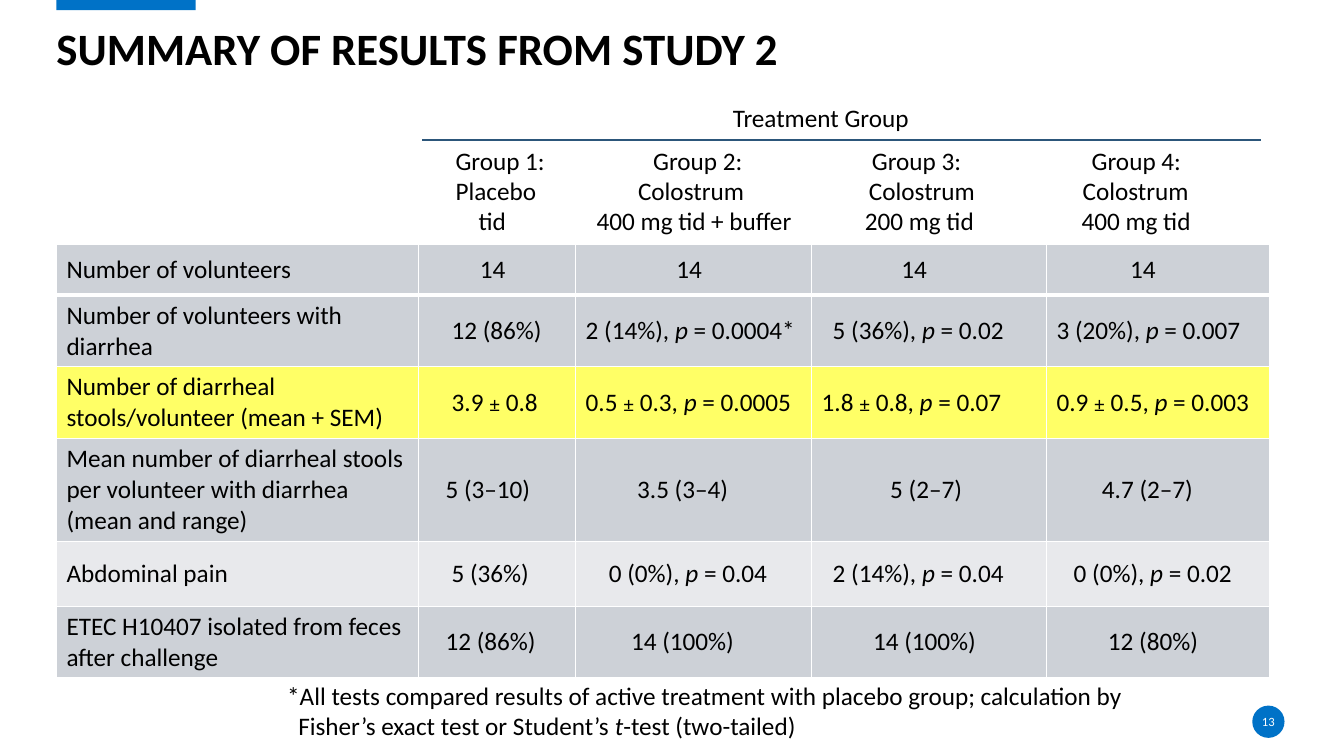
"""Build the slide that summarises the Study 2 results by treatment group."""
from dataclasses import dataclass

from lxml.etree import SubElement
from pptx import Presentation
from pptx.dml.color import RGBColor
from pptx.enum.shapes import MSO_CONNECTOR, MSO_SHAPE
from pptx.enum.text import MSO_ANCHOR, PP_ALIGN
from pptx.oxml.ns import qn
from pptx.util import Inches, Pt


@dataclass(frozen=True)
class Theme:
    font: str = "Calibri"
    symbol_font: str = "Times New Roman"
    title_size: int = 32
    body_size: int = 18
    symbol_size: int = 14
    number_size: int = 9
    black: str = "000000"
    white: str = "FFFFFF"
    accent: str = "0072C7"
    rule: str = "2C567A"
    band: str = "CDD1D7"
    light_band: str = "E8E9EC"
    highlight: str = "FFFF66"


theme = Theme()


def write(paragraph, text, size=theme.body_size, color=theme.black, bold=False,
          indent=0, align=PP_ALIGN.LEFT):
    """Write text into a paragraph; underscores enclose italics."""
    paragraph.alignment = align
    if indent:
        properties = paragraph._p.get_or_add_pPr()
        properties.set("marL", str(Inches(indent)))
        properties.set("indent", "0")
    for index, part in enumerate(text.split("_")):
        for piece in filter(None, part.partition("±")):
            is_symbol = piece == "±"
            run = paragraph.add_run()
            run.text = piece
            run.font.name = theme.symbol_font if is_symbol else theme.font
            run.font.size = Pt(theme.symbol_size if is_symbol else size)
            run.font.bold = bold or is_symbol
            run.font.italic = index % 2 == 1
            run.font.color.rgb = RGBColor.from_string(color)


def add_text_frame(left, top, width, height, wrap=True):
    """Add a text box and return its text frame."""
    box = slide.shapes.add_textbox(Inches(left), Inches(top), Inches(width), Inches(height))
    box.text_frame.word_wrap = wrap
    return box.text_frame


presentation = Presentation()
presentation.slide_width = Inches(13.33)
presentation.slide_height = Inches(7.5)
slide = presentation.slides.add_slide(presentation.slide_layouts[6])

accents = []
for kind, left, top, width, height in (
    (MSO_SHAPE.RECTANGLE, 0.56, 0, 1.38, 0.1),
    (MSO_SHAPE.OVAL, 12.42, 7, 0.32, 0.32),
):
    shape = slide.shapes.add_shape(kind, Inches(left), Inches(top), Inches(width), Inches(height))
    shape.shadow.inherit = False
    shape.fill.solid()
    shape.fill.fore_color.rgb = RGBColor.from_string(theme.accent)
    shape.line.fill.background()
    accents.append(shape)

number_frame = accents[1].text_frame
title_frame = add_text_frame(0.56, 0.19, 11.28, 0.63)
for frame in (number_frame, title_frame):
    frame.margin_left = frame.margin_right = frame.margin_top = frame.margin_bottom = 0
    frame.vertical_anchor = MSO_ANCHOR.MIDDLE
write(number_frame.paragraphs[0], "13", size=theme.number_size, color=theme.white,
      align=PP_ALIGN.CENTER)
write(title_frame.paragraphs[0], "SUMMARY OF RESULTS FROM STUDY 2",
      size=theme.title_size, bold=True)
title_frame.paragraphs[0].line_spacing = 0.9

ROWS = (
    (theme.band, "Number of volunteers", "14", "14", "14", "14"),
    (theme.band, "Number of volunteers with diarrhea", "12 (86%)",
     "2 (14%), _p_ = 0.0004*", "5 (36%), _p_ = 0.02", "3 (20%), _p_ = 0.007"),
    (theme.highlight, "Number of diarrheal stools/volunteer (mean + SEM)", "3.9 ± 0.8",
     "0.5 ± 0.3, _p_ = 0.0005", "1.8 ± 0.8, _p_ = 0.07", "0.9 ± 0.5, _p_ = 0.003"),
    (theme.band, "Mean number of diarrheal stools per volunteer with diarrhea (mean and range)",
     "5 (3–10)", "3.5 (3–4)", "5 (2–7)", "4.7 (2–7)"),
    (theme.light_band, "Abdominal pain", "5 (36%)",
     "0 (0%), _p_ = 0.04", "2 (14%), _p_ = 0.04", "0 (0%), _p_ = 0.02"),
    (theme.band, "ETEC H10407 isolated from feces after challenge",
     "12 (86%)", "14 (100%)", "14 (100%)", "12 (80%)"),
)
INDENTS = (
    (0, 0.51, 0.9, 0.79, 0.73),
    (0, 0.23, 0, 0.11, 0),
    (0, 0.23, 0, 0, 0),
    (0, 0.17, 0.51, 0.68, 0.45),
    (0, 0.23, 0.23, 0.11, 0.17),
    (0, 0.17, 0.45, 0.51, 0.51),
)
COLUMN_WIDTHS = (3.59, 1.56, 2.34, 2.33, 2.21)
ROW_HEIGHTS = (0.51, 0.71, 0.71, 1.02, 0.65, 0.7)

table = slide.shapes.add_table(
    len(ROWS), len(COLUMN_WIDTHS), Inches(0.56), Inches(2.42),
    Inches(sum(COLUMN_WIDTHS)), Inches(sum(ROW_HEIGHTS))).table
table.first_row = False
table.horz_banding = False
for column, width in zip(table.columns, COLUMN_WIDTHS):
    column.width = Inches(width)
for row_index, (fill, *texts) in enumerate(ROWS):
    table.rows[row_index].height = Inches(ROW_HEIGHTS[row_index])
    for column_index, text in enumerate(texts):
        cell = table.cell(row_index, column_index)
        cell.vertical_anchor = MSO_ANCHOR.MIDDLE
        for side in ("L", "R", "T", "B"):
            is_thick = (row_index, side) in ((0, "B"), (1, "T"))
            border = SubElement(cell._tc.get_or_add_tcPr(), qn(f"a:ln{side}"),
                                w=str(Pt(3 if is_thick else 1)))
            border_fill = SubElement(border, qn("a:solidFill"))
            SubElement(border_fill, qn("a:srgbClr"), val=theme.white)
        cell.fill.solid()
        cell.fill.fore_color.rgb = RGBColor.from_string(fill)
        write(cell.text_frame.paragraphs[0], text, indent=INDENTS[row_index][column_index])

treatment_frame = add_text_frame(7.17, 0.97, 1.97, 0.4, wrap=False)
write(treatment_frame.paragraphs[0], "Treatment Group")

header_rule = slide.shapes.add_connector(
    MSO_CONNECTOR.STRAIGHT, Inches(4.19), Inches(1.39), Inches(12.51), Inches(1.39))
header_rule.line.color.rgb = RGBColor.from_string(theme.rule)
header_rule.line.width = Pt(1.5)
SubElement(header_rule._element.spPr, qn("a:effectLst"))

GROUPS = (
    (4.42, 1.3, (("Group 1:", 0), ("Placebo", 0), ("tid", 0.23))),
    (5.82, 2.3, (("Group 2:", 0.56), ("Colostrum", 0.41), ("400 mg tid + buffer", 0))),
    (8.48, 1.5, (("Group 3:", 0.07), ("Colostrum", 0.04), ("200 mg tid", 0))),
    (10.63, 1.5, (("Group 4:", 0.1), ("Colostrum", 0.01), ("400 mg tid", 0))),
)
for left, width, lines in GROUPS:
    group_frame = add_text_frame(left, 1.39, width, 1.01)
    for index, (text, indent) in enumerate(lines):
        paragraph = group_frame.add_paragraph() if index else group_frame.paragraphs[0]
        write(paragraph, text, indent=indent)

footnote_frame = add_text_frame(2.75, 6.7, 9.31, 0.71)
write(footnote_frame.paragraphs[0],
      "*All tests compared results of active treatment with placebo group; calculation by")
write(footnote_frame.add_paragraph(),
      "Fisher’s exact test or Student’s _t_-test (two-tailed)", indent=0.11)

presentation.save("out.pptx")
